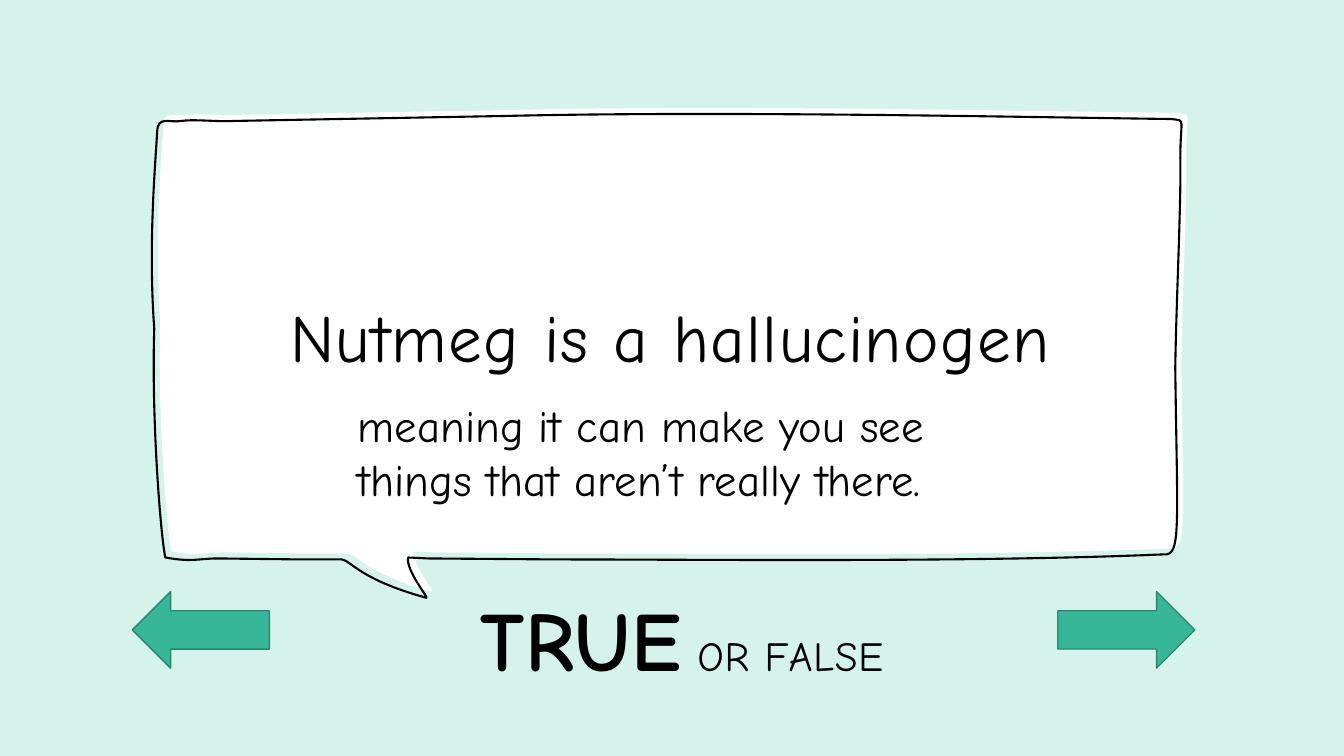
"""Build a true-or-false quiz slide with a hand-drawn speech bubble."""
from dataclasses import dataclass
from math import cos, radians, sin

from pptx import Presentation
from pptx.dml.color import RGBColor
from pptx.enum.shapes import MSO_SHAPE
from pptx.enum.text import MSO_ANCHOR, PP_ALIGN
from pptx.oxml.ns import qn
from pptx.util import Pt

RIGHT_ARROW = MSO_SHAPE.RIGHT_ARROW
TOP, MIDDLE = MSO_ANCHOR.TOP, MSO_ANCHOR.MIDDLE
LEFT, CENTER = PP_ALIGN.LEFT, PP_ALIGN.CENTER


@dataclass(frozen=True)
class Theme:
    mint: RGBColor = RGBColor(0xD5, 0xF2, 0xEB)
    white: RGBColor = RGBColor(0xFF, 0xFF, 0xFF)
    ink: RGBColor = RGBColor(0x00, 0x00, 0x00)
    green: RGBColor = RGBColor(0x38, 0xB6, 0x98)
    dark_green: RGBColor = RGBColor(0x29, 0x87, 0x70)
    font: str = "Comic Neue"
    claim: float = 48
    meaning: float = 32
    answer: float = 60.1
    alternative: float = 29.6


theme = Theme()

BUBBLE_START = (129.6, 86.4)
BUBBLE_SEGMENTS = [
    [(120.2, 87.8), (113, 82.8), (112.3, 93.6)],
    [(110.9, 118.8), (105.8, 175), (110.2, 234.7)],
    [(108, 301.7), (115.2, 386.6), (118.1, 398.2)],
    [(138.2, 401.8), (140.4, 398.9), (156.2, 398.9)],
    [(215.3, 399.6)],
    [(244.1, 399.6)],
    [(250.6, 400.3), (257, 414), (304.6, 427)],
    [(306.7, 427.7), (289.4, 406.8), (291.6, 398.2)],
    [(306, 398.9)],
    [(398.2, 399.6)],
    [(500.4, 399.6), (694.1, 401.8), (830.9, 396)],
    [(843.8, 397.4), (841, 379.4), (839.5, 262.8)],
    [(840.2, 214.6), (843.8, 143.3), (843.1, 113)],
    [(843.1, 83.5), (847.4, 86.4), (836.6, 85)],
    [(721.4, 83.5), (517.7, 79.2), (362.2, 82.8)],
    [(167, 86.4)],
    [(154.8, 87.1), (139, 85), BUBBLE_START],
]
BUBBLE_CENTER = (478.1, 251.6)
BUBBLE_TILT = -1
FILL_SHIFT = 4.3
UNITS_PER_POINT = 100

prs = Presentation()
prs.slide_width, prs.slide_height = Pt(960), Pt(540)
slide = prs.slides.add_slide(prs.slide_layouts[6])
slide.background.fill.solid()
slide.background.fill.fore_color.rgb = theme.mint


def add_bubble(shift):
    """Add the tilted bubble, moved right and up by shift, with true curves."""
    center_x, center_y = BUBBLE_CENTER
    turn = radians(-BUBBLE_TILT)
    points = []
    for x, y in [BUBBLE_START, *(p for segment in BUBBLE_SEGMENTS for p in segment)]:
        dx, dy = x - center_x, y - center_y
        level_x = center_x + dx * cos(turn) - dy * sin(turn) + shift
        level_y = center_y + dx * sin(turn) + dy * cos(turn) - shift
        points.append((round(level_x * UNITS_PER_POINT), round(level_y * UNITS_PER_POINT)))
    builder = slide.shapes.build_freeform(*points[0], scale=Pt(1) / UNITS_PER_POINT)
    builder.add_line_segments(points[1:], close=True)
    shape = builder.convert_to_shape()
    contour = next(shape._element.iter(qn("a:path")))
    strokes = iter(contour.findall(qn("a:lnTo")))
    for segment in BUBBLE_SEGMENTS:
        first, *others = [next(strokes) for _ in segment]
        if others:
            first.tag = qn("a:cubicBezTo")
        for other in others:
            first.append(other[0])
            contour.remove(other)
    shape.rotation = BUBBLE_TILT
    shape.shadow.inherit = False
    return shape


def add_text(box, runs, size, align=LEFT, anchor=TOP, tracking=0):
    """Add a one-paragraph text box and return its paragraph."""
    frame = slide.shapes.add_textbox(*map(Pt, box)).text_frame
    frame.word_wrap = True
    frame.vertical_anchor = anchor
    paragraph = frame.paragraphs[0]
    paragraph.alignment = align
    paragraph.font.name = theme.font
    paragraph.font.size = Pt(size)
    paragraph.font.color.rgb = theme.ink
    for words in runs:
        run = paragraph.add_run()
        run.text = words
        if tracking:
            run.font._element.set("spc", str(round(tracking * 100)))
    return paragraph


bubble_fill = add_bubble(FILL_SHIFT)
bubble_fill.fill.solid()
bubble_fill.fill.fore_color.rgb = theme.white
bubble_fill.line.fill.background()

bubble_outline = add_bubble(0)
bubble_outline.fill.background()
bubble_outline.line.color.rgb = theme.ink
bubble_outline.line.width = Pt(1.5)

add_text((181.4, 139, 595.4, 200.9), ["Nutmeg is a hallucinogen"],
         theme.claim, CENTER, MIDDLE, tracking=1)

verdict = add_text((336.2, 429.8, 517.7, 69.8), ["TRUE", " OR FALSE"],
                   theme.answer, tracking=0.5)
verdict.line_spacing = 0.8
verdict.space_before = Pt(10)
answer, alternative = verdict.runs
answer.font.bold = True
alternative.font.size = Pt(theme.alternative)

add_text((248.4, 280.8, 467.3, 46.1),
         ["meaning it can make you see things that aren’t really there."],
         theme.meaning)

for arrow_left, rotation in ((94.5, 180), (755.6, 0)):
    arrow = slide.shapes.add_shape(
        RIGHT_ARROW, Pt(arrow_left), Pt(422.6), Pt(97.9), Pt(54.7))
    arrow.rotation = rotation
    arrow.shadow.inherit = False
    arrow.fill.solid()
    arrow.fill.fore_color.rgb = theme.green
    arrow.line.color.rgb = theme.dark_green
    arrow.line.width = Pt(1)

prs.save("out.pptx")
